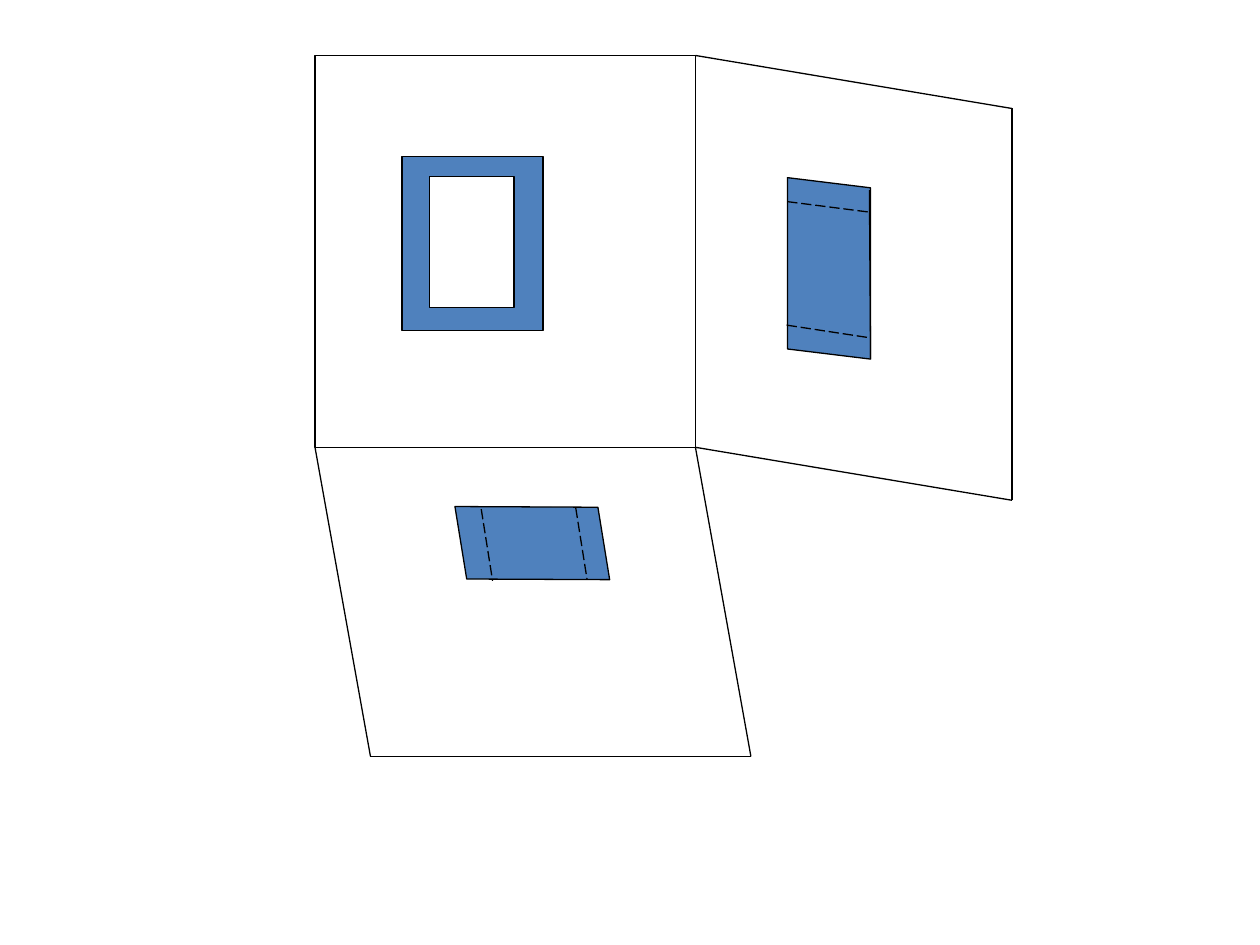
from pptx import Presentation
from pptx.dml.color import RGBColor
from pptx.enum.dml import MSO_LINE
from pptx.enum.shapes import MSO_CONNECTOR, MSO_SHAPE
from pptx.oxml.ns import qn
from pptx.util import Pt
from lxml import etree

BLACK, BLUE, WHITE = "000000", "4F81BD", "FFFFFF"

# Front plane: left, top, width, height
PLANE = (180, 31.7, 217.4, 223.9)
# Depth of the planes that fold away from the front one
FLOOR_SHIFT = (31.7, 176.6)
SIDE_SHIFT = (180.9, 30.3)

# Front view: frame and its opening
FRONT_VIEW = [
    ((229.7, 89.3, 80.6, 99.4), BLUE),
    ((245.5, 100.8, 48.2, 74.9), WHITE),
]

# Side and top views: bounds, rotation, slant
SLANTED_VIEWS = [
    ((421.9, 129.6, 103.7, 47.5), 270, 0.122),
    ((276.5, 270, 55.4, 80.6), 260.8, 0.243),
]

# Hidden edges: start and end
HIDDEN_EDGES = [
    ((275, 290.9), (281.5, 331.9)),
    ((329, 290.2), (335.5, 331.2)),
    ((449.5, 185.8), (496.8, 193)),
    ((449.8, 115.2), (496.6, 121.2)),
]
SIDE_VIEW_EDGE = ((496.8, 108.7), (497.5, 205.2))


def color(value):
    return RGBColor.from_string(value)


def style_line(line):
    line.color.rgb = color(BLACK)
    line.width = Pt(0.75)


def add_figure(shapes, kind, bounds, fill=None):
    figure = shapes.add_shape(kind, *map(Pt, bounds))
    figure.shadow.inherit = False
    if fill:
        figure.fill.solid()
        figure.fill.fore_color.rgb = color(fill)
    else:
        figure.fill.background()
    style_line(figure.line)
    return figure


def add_edge(shapes, start, end, dashed=False):
    edge = shapes.add_connector(MSO_CONNECTOR.STRAIGHT, *map(Pt, start + end))
    style_line(edge.line)
    if dashed:
        edge.line.dash_style = MSO_LINE.LONG_DASH
    etree.SubElement(edge._element.spPr, qn("a:effectLst"))


def add_folded_plane(shapes, first, second, shift):
    far = [(x + shift[0], y + shift[1]) for x, y in (first, second)]
    add_edge(shapes, first, far[0])
    add_edge(shapes, second, far[1])
    add_edge(shapes, *far)


deck = Presentation()
deck.slide_width, deck.slide_height = Pt(720), Pt(540)
page = deck.slides.add_slide(deck.slide_layouts[6])
shapes = page.shapes

# Projection planes
left, top, width, height = PLANE
right, bottom = left + width, top + height
add_figure(shapes, MSO_SHAPE.RECTANGLE, PLANE)
add_folded_plane(shapes, (left, bottom), (right, bottom), FLOOR_SHIFT)
add_folded_plane(shapes, (right, top), (right, bottom), SIDE_SHIFT)

# Front view
front = shapes.add_group_shape()
for bounds, fill in FRONT_VIEW:
    add_figure(front.shapes, MSO_SHAPE.RECTANGLE, bounds, fill)

# Side and top views
for bounds, rotation, slant in SLANTED_VIEWS:
    view = add_figure(shapes, MSO_SHAPE.PARALLELOGRAM, bounds, BLUE)
    view.rotation = rotation
    view.adjustments[0] = slant

# Edges drawn over the views
for start, end in HIDDEN_EDGES:
    add_edge(shapes, start, end, dashed=True)
add_edge(shapes, *SIDE_VIEW_EDGE)

deck.save("out.pptx")
